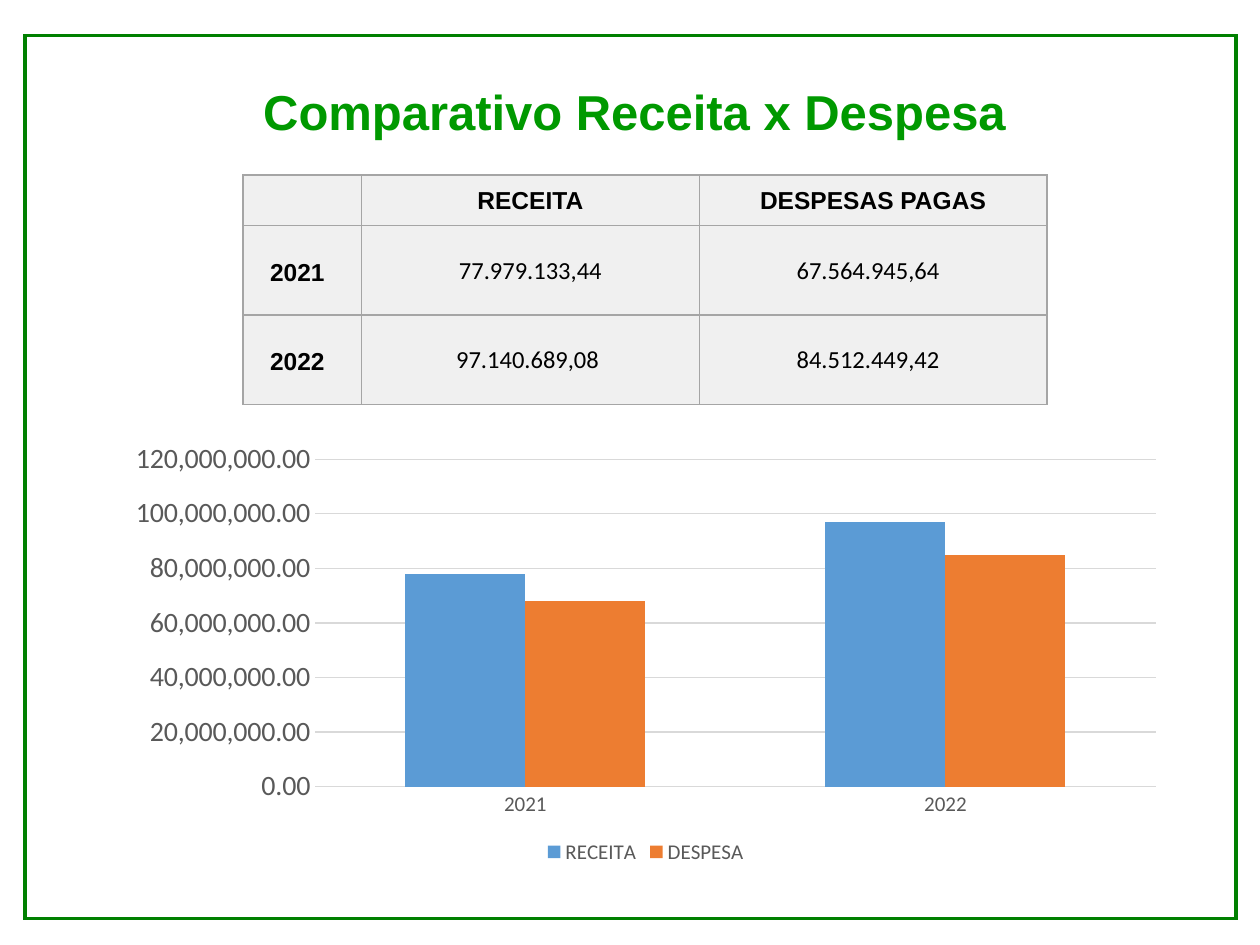
"""Build a slide that compares revenue and expense for two years."""
from lxml.etree import SubElement
from pptx import Presentation
from pptx.chart.data import CategoryChartData
from pptx.dml.color import RGBColor
from pptx.enum.chart import XL_CHART_TYPE, XL_LEGEND_POSITION, XL_TICK_MARK
from pptx.enum.shapes import MSO_SHAPE
from pptx.enum.text import MSO_ANCHOR, PP_ALIGN
from pptx.oxml.ns import qn
from pptx.util import Inches, Pt


def color(code):
    return RGBColor.from_string(code)


def write(frame, text, size=14, font="Arial", bold=True, ink="000000"):
    para = frame.paragraphs[0]
    para.alignment = PP_ALIGN.CENTER
    run = para.add_run()
    run.text = text
    run.font.size = Pt(size)
    run.font.name = font
    run.font.bold = bold
    run.font.color.rgb = color(ink)


deck = Presentation()
deck.slide_width, deck.slide_height = Inches(10), Inches(7.5)
slide = deck.slides.add_slide(deck.slide_layouts[6])
shapes = slide.shapes

border = shapes.add_shape(
    MSO_SHAPE.RECTANGLE, Inches(0.2), Inches(0.28), Inches(9.61), Inches(7.01))
border.shadow.inherit = False
border.fill.background()
border.line.color.rgb = color("008000")
border.line.width = Pt(2)
SubElement(border.line._get_or_add_ln(), qn("a:miter"), lim="800000")

title = shapes.add_textbox(Inches(1.06), Inches(0.6), Inches(7.95), Inches(0.57))
title.text_frame.word_wrap = True
write(title.text_frame, "Comparativo Receita x Despesa", size=28, ink="009900")

rows = [
    ["", "RECEITA", "DESPESAS PAGAS"],
    ["2021", "77.979.133,44", "67.564.945,64"],
    ["2022", "97.140.689,08 ", "84.512.449,42"],
]
table = shapes.add_table(
    3, 3, Inches(1.93), Inches(1.39), Inches(6.38), Inches(1.82)).table
for col, width in zip(table.columns, [0.94, 2.68, 2.76]):
    col.width = Inches(width)
for row, height in zip(table.rows, [0.4, 0.71, 0.71]):
    row.height = Inches(height)

for i, row in enumerate(rows):
    for j, text in enumerate(row):
        cell = table.cell(i, j)
        cell.vertical_anchor = MSO_ANCHOR.MIDDLE
        cell.margin_left = Inches(0.01)
        cell.margin_top = Inches(0.01 if j else 0.04)
        cell.margin_right = Inches(0.09 if i and j != 1 else 0.01)
        cell.margin_bottom = 0
        props = cell._tc.get_or_add_tcPr()
        for side in ["lnL", "lnR", "lnT", "lnB"]:
            edge = SubElement(props, qn("a:" + side), w=str(Pt(1)))
            paint = SubElement(edge, qn("a:solidFill"))
            SubElement(paint, qn("a:srgbClr"), val="A5A5A5")
        cell.fill.solid()
        cell.fill.fore_color.rgb = color("F0F0F0")
        if text:
            value = i > 0 and j > 0
            write(cell.text_frame, text,
                  font="Calibri" if value else "Arial", bold=not value)

data = CategoryChartData(number_format="#,##0.00")
data.categories = ["2021", "2022"]
data.add_series("RECEITA", [78000000, 97000000])
data.add_series("DESPESA", [68000000, 85000000])
chart = shapes.add_chart(
    XL_CHART_TYPE.COLUMN_CLUSTERED, Inches(0.91), Inches(3.44),
    Inches(8.43), Inches(3.46), data).chart
chart.has_title = False
chart.font.name = "Calibri"
chart.font.size = Pt(10)
chart.has_legend = True
chart.legend.position = XL_LEGEND_POSITION.BOTTOM
chart.legend.include_in_layout = False

plot = chart.plots[0]
plot.gap_width = 150
plot.overlap = 0
plot.vary_by_categories = False
for series, code in zip(plot.series, ["5B9BD5", "ED7D31"]):
    series.format.fill.solid()
    series.format.fill.fore_color.rgb = color(code)

for axis in [chart.category_axis, chart.value_axis]:
    axis.major_tick_mark = axis.minor_tick_mark = XL_TICK_MARK.NONE
    axis.format.line.fill.background()
fonts = [(chart.category_axis.tick_labels.font, 12),
         (chart.value_axis.tick_labels.font, 16), (chart.legend.font, 12)]
for font, size in fonts:
    font.name = "Calibri"
    font.size = Pt(size)
    font.color.rgb = color("595959")

scale = chart.value_axis
scale.minimum_scale = 0
scale.maximum_scale = 120000000
scale.major_unit = 20000000
scale.tick_labels.number_format = "#,##0.00"
scale.tick_labels.number_format_is_linked = False
scale.has_major_gridlines = True
grid = scale.major_gridlines.format.line
grid.color.rgb = color("D9D9D9")
grid.width = Pt(0.75)

deck.save("out.pptx")
